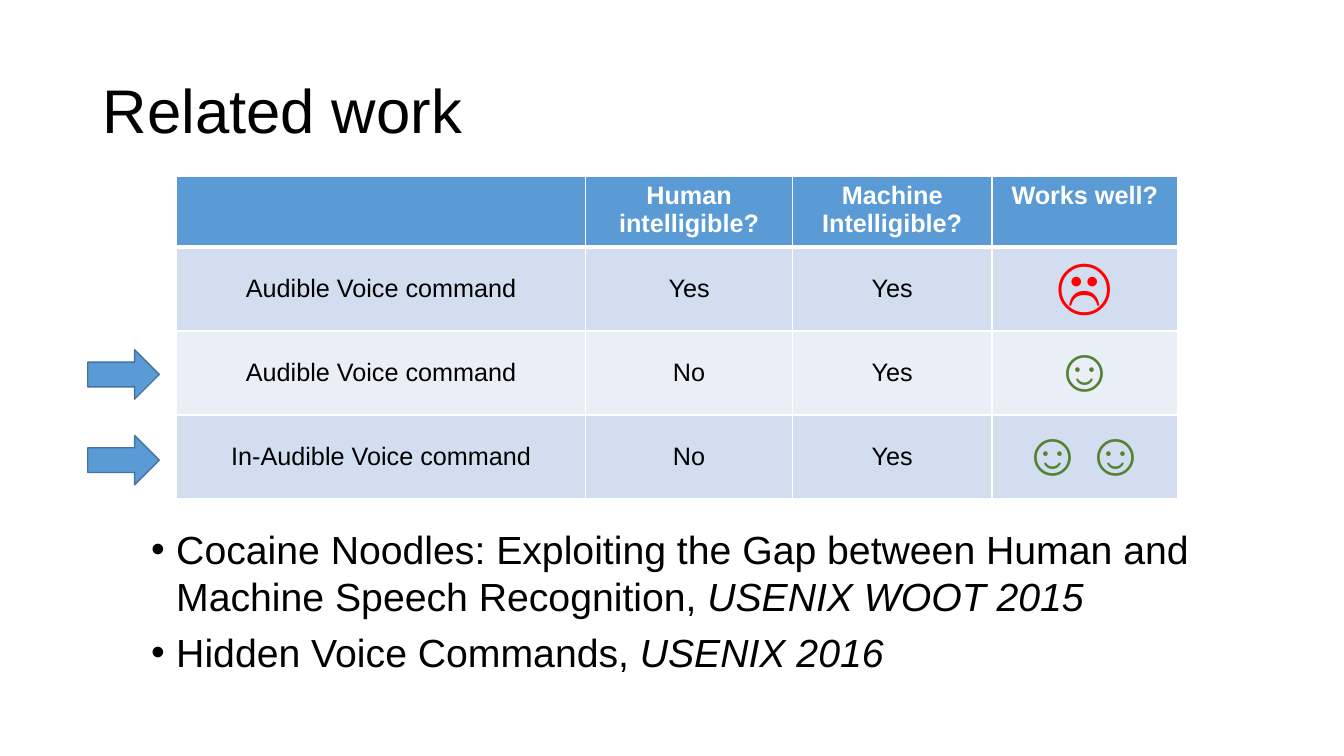
from lxml import etree
from pptx import Presentation
from pptx.dml.color import RGBColor
from pptx.enum import shapes, text
from pptx.oxml import ns
from pptx.util import Inches, Pt

HUES = {
    "black": "000000", "white": "FFFFFF", "blue": "5B9BD5", "edge": "43739E",
    "dark": "D2DEEF", "light": "EAEFF7", "red": "FF0000", "green": "548235",
}


def add_run(para, words, size, hue="black", bold=False, italic=False):
    run = para.add_run()
    run.text = words
    font = run.font
    font.name, font.size = "Arial", Pt(size)
    font.bold, font.italic = bold, italic
    font.color.rgb = RGBColor.from_string(HUES[hue])


def add_edge(cell, side, width):
    """Draw one white cell border; call before the cell is filled."""
    line = etree.SubElement(cell._tc.get_or_add_tcPr(), ns.qn("a:" + side), w=str(Pt(width)))
    fill = etree.SubElement(line, ns.qn("a:solidFill"))
    etree.SubElement(fill, ns.qn("a:srgbClr"), val=HUES["white"])


prs = Presentation()
prs.slide_width, prs.slide_height = Inches(13.33), Inches(7.5)
slide = prs.slides.add_slide(prs.slide_layouts[6])

# Title
frame = slide.shapes.add_textbox(Inches(0.92), Inches(0.4), Inches(11.5), Inches(1.45)).text_frame
frame.word_wrap = True
frame.vertical_anchor = text.MSO_ANCHOR.MIDDLE
para = frame.paragraphs[0]
para.line_spacing = 0.9
add_run(para, "Related work", 44)

# Papers
papers = [
    ("Cocaine Noodles: Exploiting the Gap between Human and Machine Speech Recognition, ",
     "USENIX WOOT 2015", 1.0),
    ("Hidden Voice Commands, ", "USENIX 2016", 0.9),
]
frame = slide.shapes.add_textbox(Inches(1.4), Inches(5.16), Inches(11.5), Inches(1.7)).text_frame
frame.word_wrap = True
for i, (name, venue, gap) in enumerate(papers):
    para = frame.add_paragraph() if i else frame.paragraphs[0]
    props = para._p.get_or_add_pPr()
    props.set("marL", str(Inches(0.25)))
    props.set("indent", str(-Inches(0.25)))
    etree.SubElement(props, ns.qn("a:buFont"), typeface="Arial")
    etree.SubElement(props, ns.qn("a:buChar"), char="•")
    para.line_spacing = gap
    para.space_before = Pt(10 if i else 0)
    add_run(para, name, 28)
    add_run(para, venue, 28, italic=True)

# Comparison table
rows = [
    ("", "Human intelligible?", "Machine\nIntelligible?", "Works well?"),
    ("Audible Voice command", "Yes", "Yes", "☹"),
    ("Audible Voice command", "No", "Yes", "☺"),
    ("In-Audible Voice command", "No", "Yes", "☺☺"),
]
widths = [4.06, 2.05, 1.98, 1.84]
heights = [0.65, 0.78, 0.78, 0.78]
fills = ["blue", "dark", "light", "dark"]
moods = ["white", "red", "green", "green"]
table = slide.shapes.add_table(4, 4, Inches(1.75), Inches(1.75),
                               Inches(sum(widths)), Inches(sum(heights))).table
for col, width in zip(table.columns, widths):
    col.width = Inches(width)
for r, row in enumerate(rows):
    table.rows[r].height = Inches(heights[r])
    head = r == 0
    for c, words in enumerate(row):
        cell = table.cell(r, c)
        for side in ("lnL", "lnR", "lnT", "lnB"):
            thick = (head and side == "lnB") or (r == 1 and side == "lnT")
            add_edge(cell, side, 3 if thick else 1)
        cell.fill.solid()
        cell.fill.fore_color.rgb = RGBColor.from_string(HUES[fills[r]])
        face = c == 3 and not head
        if not head and not face:
            cell.vertical_anchor = text.MSO_ANCHOR.MIDDLE
        for i, line in enumerate(words.split("\n")):
            para = cell.text_frame.add_paragraph() if i else cell.text_frame.paragraphs[0]
            para.alignment = text.PP_ALIGN.CENTER
            if line:
                hue = moods[r] if head or face else "black"
                add_run(para, line, 44 if face else 18, hue, bold=head)

# Arrows beside the last two rows
for top in (3.47, 4.32):
    arrow = slide.shapes.add_shape(shapes.MSO_SHAPE.RIGHT_ARROW, Inches(0.87), Inches(top),
                                   Inches(0.71), Inches(0.49))
    arrow.shadow.inherit = False
    arrow.fill.solid()
    arrow.fill.fore_color.rgb = RGBColor.from_string(HUES["blue"])
    arrow.line.color.rgb = RGBColor.from_string(HUES["edge"])
    arrow.line.width = Pt(1)

prs.save("out.pptx")
